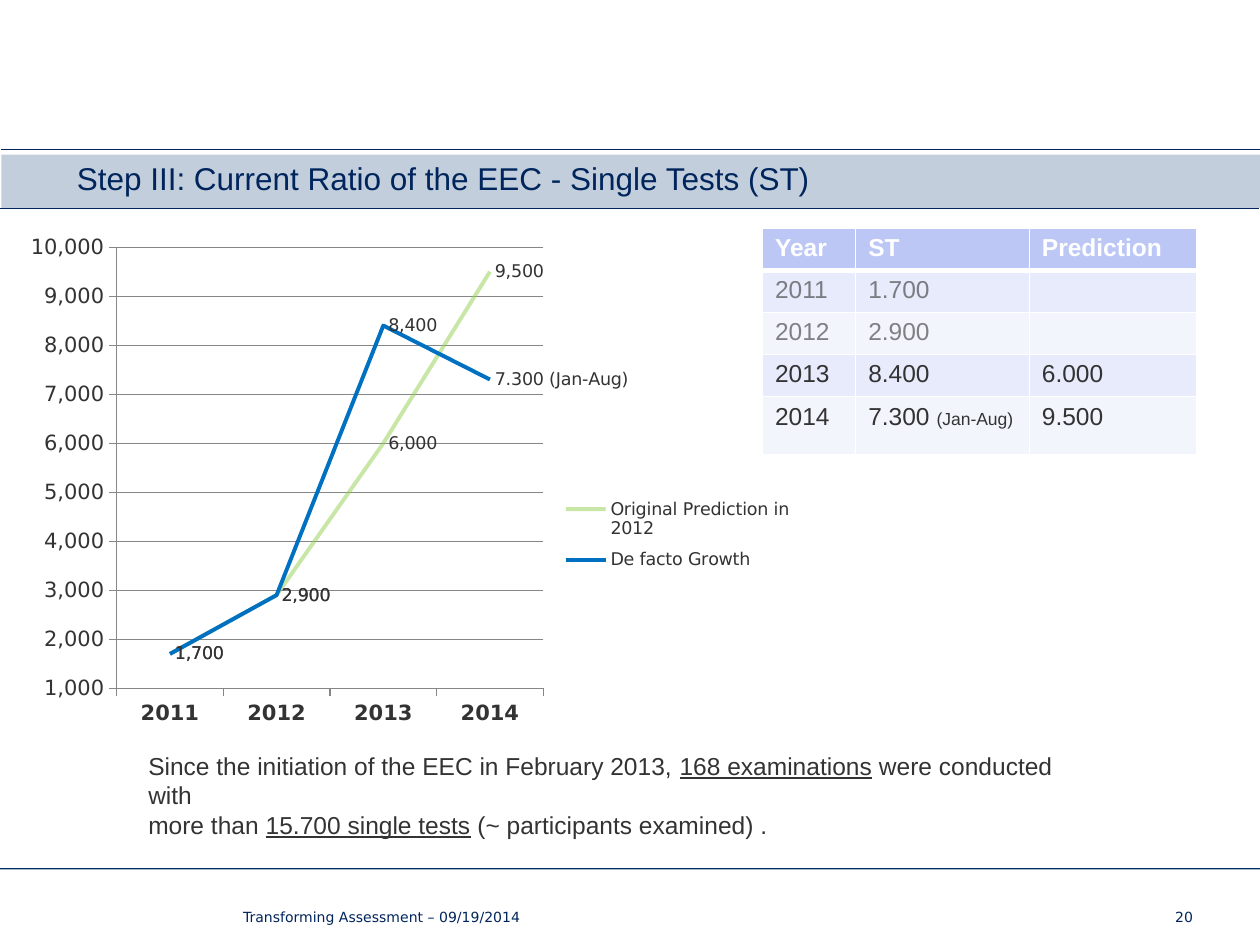
from lxml.etree import SubElement
from pptx import Presentation
from pptx.chart.data import CategoryChartData as ChartData
from pptx.dml.color import RGBColor as Rgb
from pptx.enum.chart import XL_CHART_TYPE as ChartType
from pptx.enum.chart import XL_LABEL_POSITION as LabelPos
from pptx.enum.chart import XL_LEGEND_POSITION as LegendPos
from pptx.enum.chart import XL_TICK_MARK as Tick
from pptx.enum.shapes import MSO_CONNECTOR as Connector
from pptx.enum.shapes import MSO_SHAPE as Shape
from pptx.enum.text import PP_ALIGN as Align
from pptx.oxml import parse_xml
from pptx.oxml.ns import nsdecls, qn
from pptx.util import Cm, Pt

COLORS = {
    "navy": "00245B", "title": "00255C", "rule": "002E65", "band": "A6B8CA",
    "text": "333333", "white": "FFFFFF", "grid": "868686",
    "head": "BCC7F6", "odd": "E7EBFB", "even": "F3F5FD",
    "prediction": "92D050", "growth": "0070C0",
}


def set_font(font, color="text", **formats):
    for name, value in formats.items():
        setattr(font, name, value)
    font.color.rgb = Rgb.from_string(COLORS[color])


def set_alpha(element, percent):
    for color in element.iter(qn("a:srgbClr")):
        SubElement(color, qn("a:alpha"), val=str(percent * 1000))


deck = Presentation()
deck.slide_width, deck.slide_height = Cm(25.4), Cm(19.05)
page = deck.slides.add_slide(deck.slide_layouts[6])
shapes = page.shapes

# Title band between two lines, and the footer rule
for left, top, width, height, color, alpha in [
    (0.03, 3.12, 25.37, 1.07, "band", 68),
    (0, 17.5, 25.4, 0.03, "rule", 100),
]:
    bar = shapes.add_shape(Shape.RECTANGLE, Cm(left), Cm(top), Cm(width), Cm(height))
    bar.shadow.inherit = False
    bar.fill.solid()
    bar.fill.fore_color.rgb = Rgb.from_string(COLORS[color])
    bar.line.fill.background()
    if alpha < 100:
        set_alpha(bar.fill._xPr, alpha)

for left, right, top in [(0.03, 25.4, 3.02), (0, 25.37, 4.21)]:
    line = shapes.add_connector(Connector.STRAIGHT, Cm(left), Cm(top), Cm(right), Cm(top))
    line.line.color.rgb = Rgb.from_string(COLORS["navy"])
    line.line.width = Pt(0.75)
    SubElement(line._element.spPr, qn("a:effectLst"))

# Text boxes: place, paragraph formats, font formats, runs (text, underlined)
title_font = {"color": "title", "name": "Arial", "size": Pt(18)}
body_font = {"name": "Arial", "size": Pt(14)}
footer_font = {"color": "navy", "name": "DejaVu Sans", "size": Pt(8)}
texts = [
    ((1.3, 3.17, 18.82, 0.94), {"line_spacing": 0.9}, title_font,
     [("Step III: Current Ratio of the EEC - Single Tests (ST)", False)]),
    ((2.74, 15.01, 19.3, 1.45), {}, body_font,
     [("Since the initiation of the EEC in February 2013, ", False),
      ("168 examinations", True), (" were conducted with", False), None,
      ("more than ", False), ("15.700 single tests", True),
      (" (~ participants examined) .", False)]),
    ((20.9, 18.19, 3.4, 0.66), {"alignment": Align.RIGHT}, footer_font, [("20", False)]),
    ((4.9, 18.19, 16.61, 0.64), {}, footer_font,
     [("Transforming Assessment – 09/19/2014", False)]),
]
for place, formats, font, runs in texts:
    box = shapes.add_textbox(*[Cm(length) for length in place])
    box.text_frame.word_wrap = True
    if runs[0][0].startswith("Transforming"):
        box.text_frame.margin_left = box.text_frame.margin_right = 0
    para = box.text_frame.paragraphs[0]
    for name, value in formats.items():
        setattr(para, name, value)
    for run in runs:
        if run is None:
            para.add_line_break()
            continue
        span = para.add_run()
        span.text = run[0]
        set_font(span.font, underline=run[1], **font)

# Table of single tests per year; past years are faded
rows = [
    ["Year", "ST", "Prediction"],
    ["2011", "1.700", ""],
    ["2012", "2.900", ""],
    ["2013", "8.400", "6.000"],
    ["2014", "7.300 |(Jan-Aug)", "9.500"],
]
table = shapes.add_table(5, 3, Cm(15.37), Cm(4.6), Cm(8.76), Cm(4.55)).table
for column, width in zip(table.columns, [1.88, 3.5, 3.38]):
    column.width = Cm(width)
for r, row in enumerate(rows):
    table.rows[r].height = Cm(1.17 if r == 4 else 0.79)
    for c, text in enumerate(row):
        cell = table.cell(r, c)
        for side in "LRTB":
            weight = 3 if (r, side) in [(0, "B"), (1, "T")] else 1
            cell._tc.get_or_add_tcPr().append(parse_xml(
                f'<a:ln{side} {nsdecls("a")} w="{Pt(weight)}"><a:solidFill>'
                f'<a:srgbClr val="{COLORS["white"]}"/></a:solidFill></a:ln{side}>'))
        cell.fill.solid()
        fill = "head" if r == 0 else "odd" if r % 2 else "even"
        cell.fill.fore_color.rgb = Rgb.from_string(COLORS[fill])
        para = cell.text_frame.paragraphs[0]
        set_font(para.font, name="Arial", size=Pt(14))
        for size, part in zip([14, 10], text.split("|") if text else []):
            span = para.add_run()
            span.text = part
            set_font(span.font, "text" if r else "white",
                     name="Arial", size=Pt(size), bold=r == 0)
            if r in (1, 2):
                set_alpha(span._r, 60)

# Line chart of prediction and growth
data = ChartData(number_format="#,##0")
data.categories = ["2011", "2012", "2013", "2014"]
data.add_series("Original Prediction in 2012", [1700, 2900, 6000, 9500])
data.add_series("De facto Growth", [1700, 2900, 8400, 7300])
chart = shapes.add_chart(ChartType.LINE, Cm(0.28), Cm(4.57), Cm(15.93), Cm(10.34), data).chart
chart.has_title = False
chart_font = {"name": "DejaVu Sans", "size": Pt(10)}
set_font(chart.font, **chart_font)
chart.plots[0].vary_by_categories = False

for series, color in zip(chart.plots[0].series, ["prediction", "growth"]):
    series.smooth = False
    series.format.line.width = Pt(2.25)
    series.format.line.color.rgb = Rgb.from_string(COLORS[color])
    if color == "prediction":
        set_alpha(series.format.line._ln, 50)
    labels = series.data_labels
    labels.show_value = True
    labels.position = LabelPos.RIGHT
    set_font(labels.font, **chart_font)
label = chart.plots[0].series[1].points[3].data_label
label.position = LabelPos.RIGHT
span = label.text_frame.paragraphs[0].add_run()
span.text = "7.300 (Jan-Aug)"
set_font(span.font, **chart_font)

for axis, bold in [(chart.category_axis, True), (chart.value_axis, False)]:
    axis.major_tick_mark = Tick.OUTSIDE
    axis.format.line.color.rgb = Rgb.from_string(COLORS["grid"])
    set_font(axis.tick_labels.font, name="DejaVu Sans", size=Pt(12), bold=bold)
values = chart.value_axis
values.minimum_scale, values.maximum_scale, values.major_unit = 1000, 10000, 1000
values.tick_labels.number_format = "#,##0"
values.tick_labels.number_format_is_linked = False
values.major_gridlines.format.line.color.rgb = Rgb.from_string(COLORS["grid"])

# Legend, and fixed places for plot area and legend
chart.has_legend = True
chart.legend.position = LegendPos.RIGHT
chart.legend.include_in_layout = False
set_font(chart.legend.font, **chart_font)
plot_area = chart._chartSpace.chart.plotArea
for parent, target, place in [
    (plot_area, '<c:layoutTarget val="inner"/>', (0.13, 0.04, 0.54, 0.86)),
    (chart.legend._element, "", (0.69, 0.51, 0.3, 0.18)),
]:
    for old in parent.findall(qn("c:layout")):
        parent.remove(old)
    modes = '<c:xMode val="edge"/><c:yMode val="edge"/>'
    sizes = "".join(f'<c:{key} val="{value}"/>' for key, value in zip("xywh", place))
    layout = parse_xml(f'<c:layout {nsdecls("c")}><c:manualLayout>{target}{modes}{sizes}'
                       "</c:manualLayout></c:layout>")
    parent.insert(0 if target else 1, layout)

deck.save("out.pptx")
